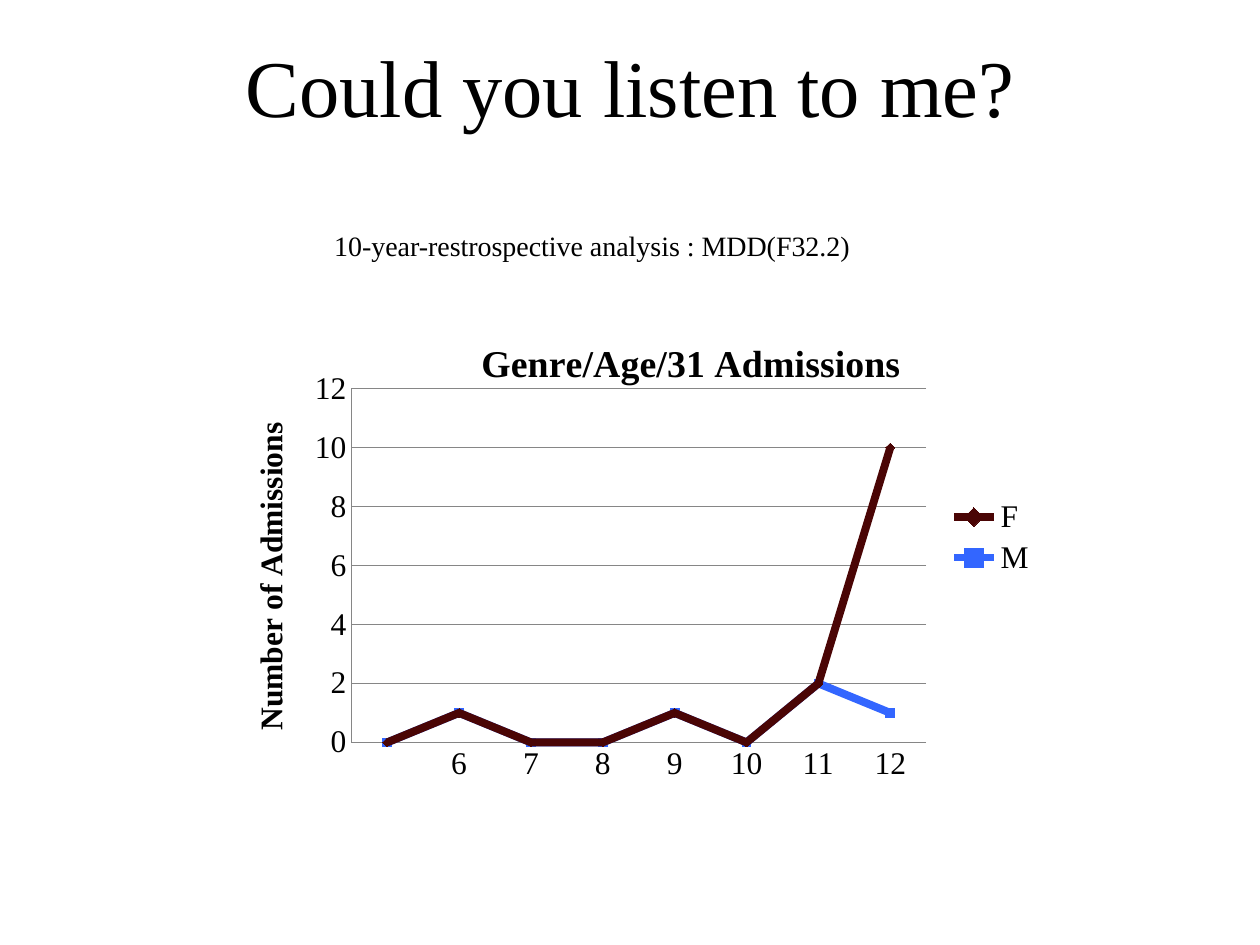
from lxml import etree
from pptx import Presentation
from pptx.chart.data import CategoryChartData
from pptx.dml.color import RGBColor
from pptx.enum.chart import XL_CHART_TYPE, XL_LEGEND_POSITION, XL_MARKER_STYLE, XL_TICK_MARK
from pptx.enum.text import MSO_ANCHOR, PP_ALIGN
from pptx.oxml import parse_xml
from pptx.oxml.ns import nsdecls, qn
from pptx.util import Inches, Pt

FONT = "Times New Roman"
BLACK = RGBColor(0x00, 0x00, 0x00)
GRAY = RGBColor(0x86, 0x86, 0x86)
BLUE = RGBColor(0x33, 0x66, 0xFF)
MAROON = RGBColor(0x4A, 0x05, 0x05)

AGES = ["", "6", "7", "8", "9", "10", "11", "12"]
ADMISSIONS = {
    "M": ([0, 1, 0, 0, 1, 0, 2, 1], BLUE, XL_MARKER_STYLE.SQUARE),
    "F": ([0, 0, 0, 0, 0, 0, 0, 9], MAROON, XL_MARKER_STYLE.DIAMOND),
}


def style_font(font, size, bold=False):
    font.name = FONT
    font.size = Pt(size)
    font.bold = bold
    font.color.rgb = BLACK


def add_centered_text(slide, text, size, left, top, width, height):
    frame = slide.shapes.add_textbox(
        Inches(left), Inches(top), Inches(width), Inches(height)).text_frame
    frame.word_wrap = True
    frame.vertical_anchor = MSO_ANCHOR.MIDDLE
    heading = frame.paragraphs[0]
    heading.text = text
    heading.alignment = PP_ALIGN.CENTER
    style_font(heading.font, size)


def set_layout(parent, after, **fractions):
    layout = parse_xml(f"<c:layout {nsdecls('c')}><c:manualLayout/></c:layout>")
    manual = layout[0]
    if "w" in fractions:
        etree.SubElement(manual, qn("c:layoutTarget")).set("val", "inner")
    for mode in ("xMode", "yMode"):
        etree.SubElement(manual, qn(f"c:{mode}")).set("val", "edge")
    for name, fraction in fractions.items():
        etree.SubElement(manual, qn(f"c:{name}")).set("val", str(fraction))
    for previous in parent.findall(qn("c:layout")):
        parent.remove(previous)
    if after is None:
        parent.insert(0, layout)
    else:
        after.addnext(layout)


def set_title(title, text, size):
    title.text_frame.text = text
    style_font(title.text_frame.paragraphs[0].font, size, bold=True)


def style_axis(axis):
    axis.major_tick_mark = axis.minor_tick_mark = XL_TICK_MARK.NONE
    axis.format.line.color.rgb = GRAY
    style_font(axis.tick_labels.font, 18)


def style_series(series, color, marker_style):
    series.smooth = False
    series.format.line.color.rgb = color
    series.format.line.width = Pt(4.5)
    marker = series.marker
    marker.style = marker_style
    marker.size = 5
    marker.format.fill.solid()
    marker.format.fill.fore_color.rgb = color
    marker.format.line.color.rgb = color


def add_admissions_chart(slide):
    admissions = CategoryChartData()
    admissions.categories = AGES
    for sex, (counts, _, _) in ADMISSIONS.items():
        admissions.add_series(sex, counts)
    chart = slide.shapes.add_chart(
        XL_CHART_TYPE.LINE_MARKERS_STACKED, Inches(1.81), Inches(2.23),
        Inches(6.52), Inches(4.07), admissions).chart
    style_font(chart.font, 18)
    chart.plots[0].vary_by_categories = False
    for series in chart.plots[0].series:
        _, color, marker_style = ADMISSIONS[series.name]
        style_series(series, color, marker_style)

    set_title(chart.chart_title, "Genre/Age/31 Admissions", 21.6)
    title = chart.chart_title._element
    set_layout(title, title.find(qn("c:tx")), x=0.3, y=0.1)
    chart.chart_title.include_in_layout = False
    plot_area = chart._chartSpace.chart.plotArea
    set_layout(plot_area, None, x=0.15, y=0.21, w=0.7, h=0.69)

    counts_axis = chart.value_axis
    for axis in (chart.category_axis, counts_axis):
        style_axis(axis)
    counts_axis.minimum_scale = 0
    counts_axis.maximum_scale = 12
    counts_axis.major_unit = 2
    counts_axis.major_gridlines.format.line.color.rgb = GRAY
    set_title(counts_axis.axis_title, "Number of Admissions", 18)

    chart.has_legend = True
    chart.legend.position = XL_LEGEND_POSITION.RIGHT
    chart.legend.include_in_layout = False
    style_font(chart.legend.font, 18)


def main():
    deck = Presentation()
    deck.slide_width = Inches(10)
    deck.slide_height = Inches(7.5)
    slide = deck.slides.add_slide(deck.slide_layouts[6])
    add_centered_text(slide, "10-year-restrospective analysis : MDD(F32.2)",
                      16, 0.7, 1.7, 8, 0.5)
    add_admissions_chart(slide)
    add_centered_text(slide, "Could you listen to me?", 46, 1, 0.2, 8, 0.95)
    deck.save("out.pptx")


if __name__ == "__main__":
    main()
